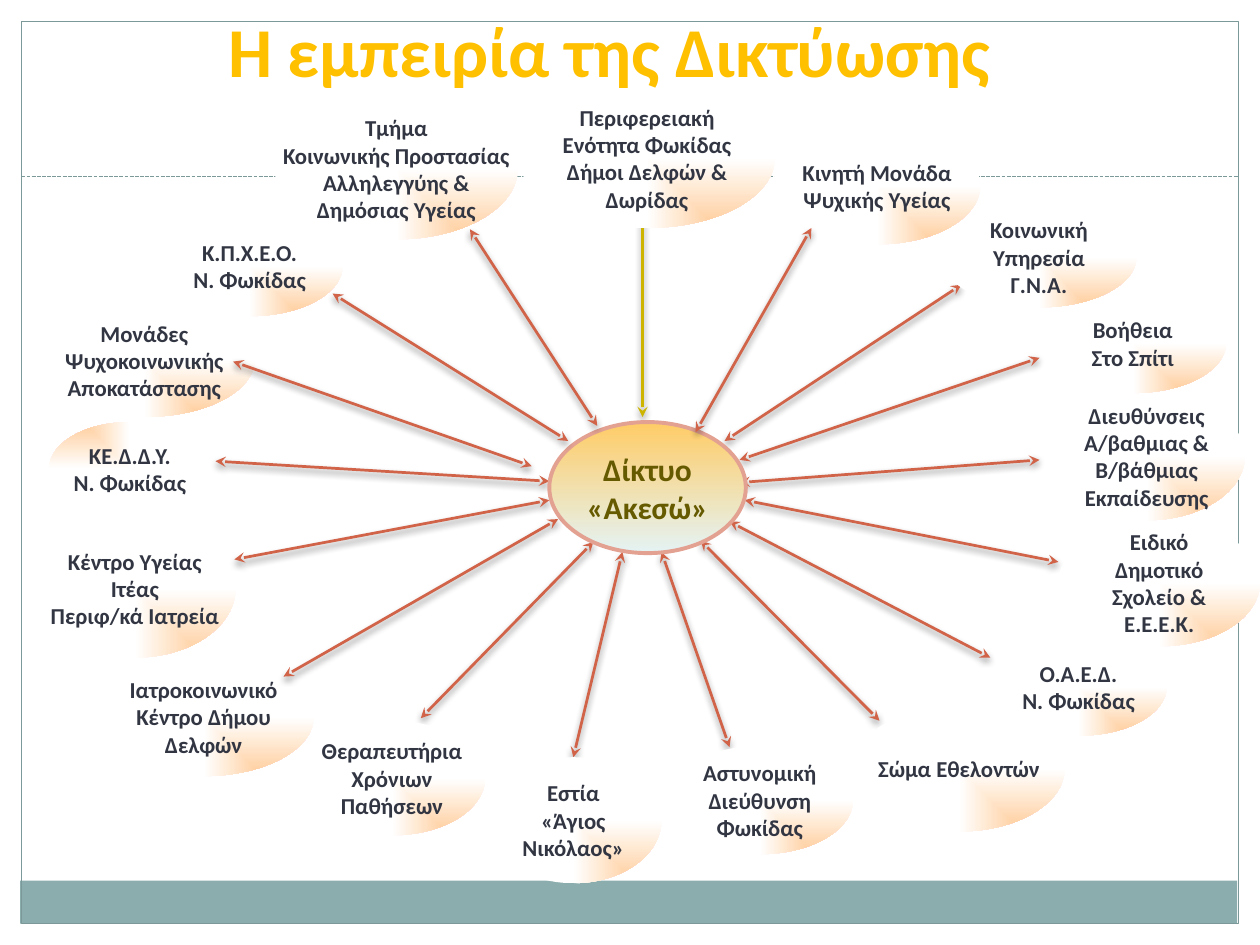
from dataclasses import dataclass

from lxml import etree
from pptx import Presentation
from pptx import util as u
from pptx.dml.color import RGBColor
from pptx.enum import dml, shapes, text
from pptx.oxml import ns

EMU_PER_PX = 9144
FONT = "Calibri"
WHITE = RGBColor(0xFF, 0xFF, 0xFF)
TEAL = RGBColor(0x8C, 0xAD, 0xAE)
FRAME_TEAL = RGBColor(0x7C, 0x99, 0x9A)
PEACH = RGBColor(0xFF, 0xCC, 0x99)
INK = RGBColor(0x32, 0x36, 0x43)
RUST = RGBColor(0xD1, 0x63, 0x49)
OLIVE = RGBColor(0xCC, 0xB4, 0x00)
HUB_TOP = RGBColor(0xFF, 0xCC, 0x66)
HUB_BOTTOM = RGBColor(0xE4, 0xF3, 0xF4)
HUB_EDGE = RGBColor(0xE3, 0xA1, 0x92)
HUB_INK = RGBColor(0x66, 0x5A, 0x00)
GOLD = RGBColor(0xFF, 0xC0, 0x00)

Box = tuple[int, int, int, int]


@dataclass(frozen=True)
class Partner:
    lines: tuple[str, ...]
    box: Box
    arrow: Box
    over_hub: bool = False
    glow_top_left: bool = False
    color: RGBColor = RUST
    two_way: bool = True


PARTNERS = (
    Partner(("Κ.Π.Χ.Ε.Ο.", "Ν. Φωκίδας"), (124, 171, 148, 80), (451, 350, 264, 233), over_hub=True),
    Partner(("Τμήμα", "Κοινωνικής Προστασίας", "Αλληλεγγύης &", "Δημόσιας Υγείας"),
            (218, 78, 193, 112), (474, 338, 373, 182), over_hub=True),
    Partner(("Μονάδες", "Ψυχοκοινωνικής", "Αποκατάστασης"),
            (27, 241, 175, 90), (422, 370, 185, 287), over_hub=True),
    Partner(("ΚΕ.Δ.Δ.Υ.", "Ν. Φωκίδας"), (39, 335, 128, 74), (436, 382, 171, 366),
            glow_top_left=True),
    Partner(("Κέντρο Υγείας", "Ιτέας", "Περιφ/κά Ιατρεία"), (27, 412, 160, 110), (436, 397, 186, 444)),
    Partner(("Ιατροκοινωνικό", "Κέντρο Δήμου", "Δελφών"),
            (74, 522, 175, 94), (443, 412, 225, 537), over_hub=True),
    Partner(("Θεραπευτήρια", "Χρόνιων", "Παθήσεων"), (237, 572, 148, 91), (471, 430, 334, 570)),
    Partner(("Εστία", "«Άγιος", "Νικόλαος»"), (385, 601, 140, 100), (494, 438, 455, 601)),
    Partner(("Αστυνομική", "Διεύθυνση", "Φωκίδας"), (529, 592, 148, 86), (525, 438, 579, 593)),
    Partner(("Σώμα Εθελοντών",), (677, 560, 168, 100), (556, 429, 698, 572)),
    Partner(("Ο.Α.Ε.Δ.", "Ν. Φωκίδας"), (786, 506, 140, 78), (579, 414, 786, 522)),
    Partner(("Ειδικό", "Δημοτικό", "Σχολείο &", "Ε.Ε.Ε.Κ."), (840, 412, 160, 101), (591, 397, 840, 446)),
    Partner(("Διευθύνσεις", "Α/βαθμιας &", "Β/βάθμιας", "Εκπαίδευσης"),
            (832, 311, 156, 102), (587, 383, 825, 365)),
    Partner(("Βοήθεια", "Στο Σπίτι"), (825, 233, 148, 79), (587, 365, 825, 284)),
    Partner(("Κοινωνική", "Υπηρεσία", "Γ.Ν.Α."), (747, 164, 155, 80), (575, 350, 763, 226)),
    Partner(("Κινητή Μονάδα", "Ψυχικής Υγείας"), (614, 101, 164, 93), (552, 343, 644, 181),
            over_hub=True),
    Partner(("Περιφερειακή", "Ενότητα Φωκίδας", "Δήμοι Δελφών &", "Δωρίδας"),
            (412, 70, 203, 111), (510, 331, 510, 162), color=OLIVE, two_way=False),
)


def emu(lengths: Box) -> list[u.Emu]:
    return [u.Emu(length * EMU_PER_PX) for length in lengths]


def add_plain_shape(slide, preset, box: Box):
    shape = slide.shapes.add_shape(preset, *emu(box))
    shape.shadow.inherit = False
    shape.fill.background()
    shape.line.fill.background()
    return shape


def add_line(slide, ends: Box, color: RGBColor, width: float):
    line = slide.shapes.add_connector(shapes.MSO_CONNECTOR.STRAIGHT, *emu(ends))
    line.line.color.rgb = color
    line.line.width = u.Pt(width)
    effects = etree.SubElement(line._element.spPr, ns.qn("a:effectLst"))
    return line, effects


def add_arrow(slide, partner: Partner) -> None:
    arrow, effects = add_line(slide, partner.arrow, partner.color, 1.57)
    for end in ("a:headEnd", "a:tailEnd") if partner.two_way else ("a:headEnd",):
        etree.SubElement(arrow.line._get_or_add_ln(), ns.qn(end), type="stealth")
    shadow = etree.SubElement(effects, ns.qn("a:outerShdw"), blurRad="50800",
                              dist="25400", dir="5400000", rotWithShape="0")
    black = etree.SubElement(shadow, ns.qn("a:srgbClr"), val="000000")
    etree.SubElement(black, ns.qn("a:alpha"), val="45000")


def set_gradient(shape, start: RGBColor, end: RGBColor) -> None:
    shape.fill.gradient()
    for stop, color in zip(shape.fill.gradient_stops, (start, end)):
        stop.color.rgb = color


def set_corner_glow(shape, top_left: bool) -> None:
    set_gradient(shape, PEACH, WHITE)
    linear = shape._element.spPr.find(".//" + ns.qn("a:lin"))
    radial = etree.Element(ns.qn("a:path"), {"path": "rect"})
    near, far = ("0", "100000") if top_left else ("100000", "0")
    etree.SubElement(radial, ns.qn("a:fillToRect"), l=near, t=near, r=far, b=far)
    linear.getparent().replace(linear, radial)


def write_lines(shape, lines: tuple[str, ...], size: int, color: RGBColor, align) -> None:
    frame = shape.text_frame
    frame.word_wrap = False
    frame.auto_size = text.MSO_AUTO_SIZE.NONE
    frame.margin_left = frame.margin_top = frame.margin_right = frame.margin_bottom = 0
    frame.vertical_anchor = text.MSO_ANCHOR.MIDDLE
    for index, line in enumerate(lines):
        paragraph = frame.add_paragraph() if index else frame.paragraphs[0]
        paragraph.alignment = align
        run = paragraph.add_run()
        run.text = line
        run.font.name = FONT
        run.font.size = u.Pt(size)
        run.font.bold = True
        run.font.color.rgb = color


def add_partner(slide, partner: Partner) -> None:
    oval = add_plain_shape(slide, shapes.MSO_SHAPE.OVAL, partner.box)
    set_corner_glow(oval, partner.glow_top_left)
    write_lines(oval, partner.lines, 13, INK, text.PP_ALIGN.CENTER)


def add_hub(slide) -> None:
    hub = add_plain_shape(slide, shapes.MSO_SHAPE.OVAL, (436, 335, 156, 104))
    set_gradient(hub, HUB_TOP, HUB_BOTTOM)
    hub.fill.gradient_angle = 270
    hub.line.color.rgb = HUB_EDGE
    hub.line.width = u.Pt(2.25)
    write_lines(hub, ("Δίκτυο", "«Ακεσώ»"), 18, HUB_INK, text.PP_ALIGN.CENTER)


def add_backdrop(slide) -> None:
    band = add_plain_shape(slide, shapes.MSO_SHAPE.RECTANGLE, (16, 699, 966, 34))
    band.fill.solid()
    band.fill.fore_color.rgb = TEAL
    border = add_plain_shape(slide, shapes.MSO_SHAPE.RECTANGLE, (17, 17, 966, 716))
    border.line.color.rgb = FRAME_TEAL
    border.line.width = u.Pt(0.75)
    divider, _ = add_line(slide, (17, 140, 983, 140), FRAME_TEAL, 0.75)
    divider.line.dash_style = dml.MSO_LINE.SQUARE_DOT


def add_title(slide) -> None:
    title = slide.shapes.title
    title.left, title.top, title.width, title.height = emu((181, 5, 625, 68))
    write_lines(title, ("Η εμπειρία της Δικτύωσης",), 40, GOLD, text.PP_ALIGN.LEFT)


def main() -> None:
    deck = Presentation()
    deck.slide_width, deck.slide_height = emu((1000, 750))
    slide = deck.slides.add_slide(deck.slide_layouts[5])
    add_title(slide)
    add_backdrop(slide)
    for partner in PARTNERS:
        if not partner.over_hub:
            add_arrow(slide, partner)
    for partner in PARTNERS:
        add_partner(slide, partner)
    add_hub(slide)
    for partner in PARTNERS:
        if partner.over_hub:
            add_arrow(slide, partner)
    deck.save("out.pptx")


if __name__ == "__main__":
    main()
